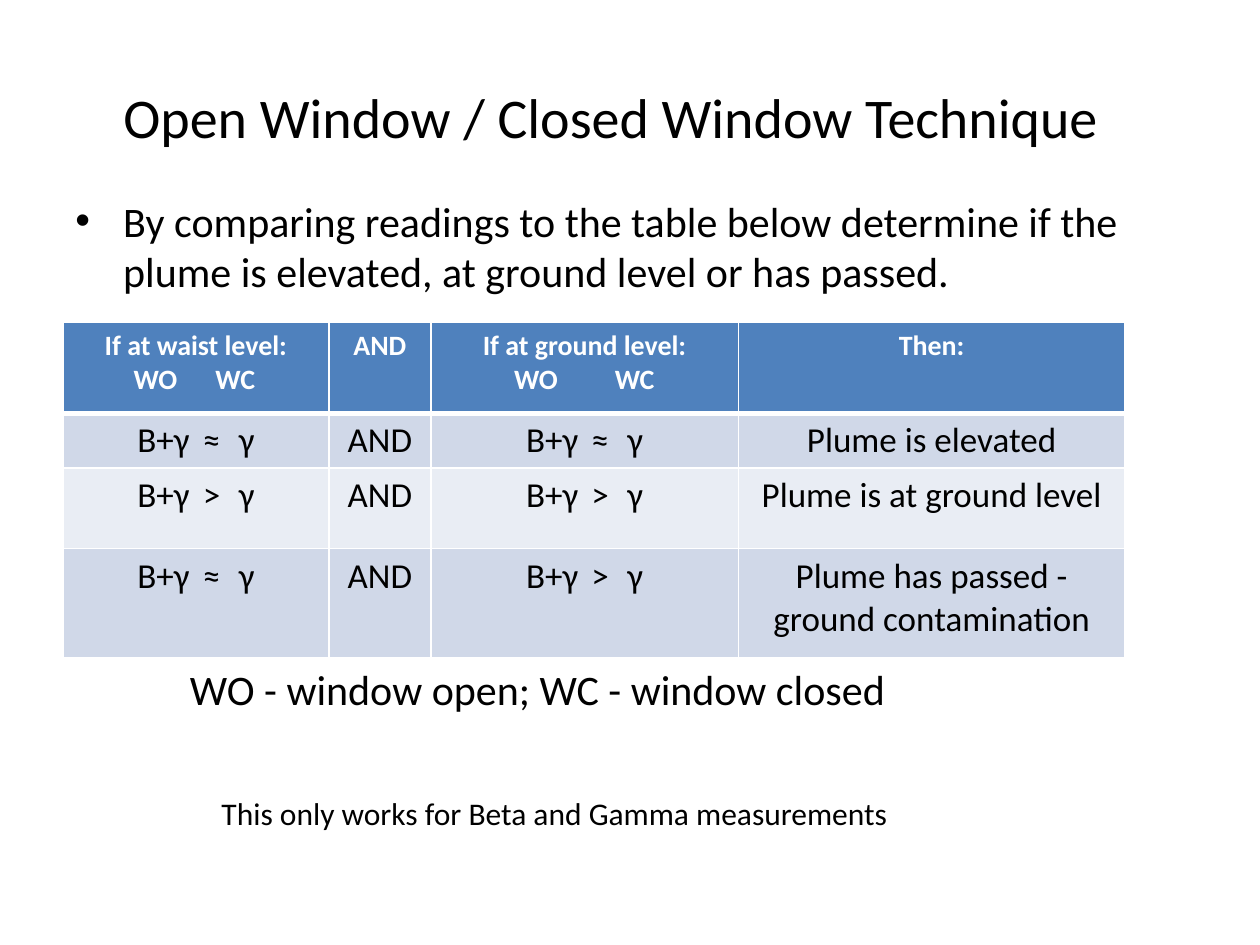
from lxml.etree import SubElement
from pptx import Presentation
from pptx.dml.color import RGBColor
from pptx.enum.text import MSO_ANCHOR, PP_ALIGN
from pptx.oxml.ns import qn
from pptx.util import Inches, Pt

# Content
TITLE = "Open Window / Closed Window Technique"
INSTRUCTION = ("By comparing readings to the table below determine if the plume "
               "is elevated, at ground level or has passed.")
LEGEND = "WO - window open; WC - window closed"
CAVEAT = "This only works for Beta and Gamma measurements"
# Heading, then the places of its WO and WC labels within the cell
HEADINGS = [("If at waist level:", (0.46, 1.11)), ("AND", None),
            ("If at ground level:", (0.56, 1.36)), ("Then:", None)]
# Relation of open to closed reading at waist and at ground, then the finding
FINDINGS = [("≈", "≈", "Plume is elevated"),
            (">", ">", "Plume is at ground level"),
            ("≈", ">", "Plume has passed - ground contamination")]

# Style and grid
FONT = "Calibri"
COLORS = {"text": "000000", "white": "FFFFFF", "header": "4F81BD",
          "odd": "D0D8E8", "even": "E9EDF4"}
COLUMNS = [2.11, 0.81, 2.44, 3.07]
ROWS = [0.72, 0.43, 0.64, 0.87]
LEFT, TABLE_TOP = 0.5, 2.56


def add_run(paragraph, text, size, color="text", bold=False):
    run = paragraph.add_run()
    run.text = text
    run.font.name, run.font.size, run.font.bold = FONT, Pt(size), bold
    run.font.color.rgb = RGBColor.from_string(COLORS[color])
    return run


def add_text(slide, box, text, size):
    frame = slide.shapes.add_textbox(*map(Inches, box)).text_frame
    frame.word_wrap = True
    add_run(frame.paragraphs[0], text, size)
    return frame.paragraphs[0]


def add_bullet(paragraph, indent):
    props = paragraph._p.get_or_add_pPr()
    props.set("marL", str(Inches(indent)))
    props.set("indent", str(-Inches(indent)))
    SubElement(props, qn("a:buFont"), typeface="Arial")
    SubElement(props, qn("a:buChar"), char="•")


def style_cell(cell, fill, bottom_width):
    props = cell._tc.get_or_add_tcPr()
    for side, width in (("L", 1), ("R", 1), ("T", 1), ("B", bottom_width)):
        line = SubElement(props, qn(f"a:ln{side}"), w=str(Pt(width)))
        paint = SubElement(line, qn("a:solidFill"))
        SubElement(paint, qn("a:srgbClr"), val=COLORS["white"])
    cell.fill.solid()
    cell.fill.fore_color.rgb = RGBColor.from_string(COLORS[fill])


def fill_heading(cell, heading, label_stops):
    style_cell(cell, "header", 3)
    first = cell.text_frame.paragraphs[0]
    first.alignment = PP_ALIGN.CENTER
    add_run(first, heading, 16, "white", True)
    if label_stops:
        labels = cell.text_frame.add_paragraph()
        labels.alignment = PP_ALIGN.LEFT
        tabs = SubElement(labels._p.get_or_add_pPr(), qn("a:tabLst"))
        for stop in label_stops:
            SubElement(tabs, qn("a:tab"), pos=str(Inches(stop)), algn="l")
        add_run(labels, "\tWO\tWC", 16, "white", True)


def add_relation(paragraph, sign):
    add_run(paragraph, "Β+γ", 20)
    relation = add_run(paragraph, f" {sign} ", 20)
    relation._r.get_or_add_rPr().set("spc", "300")
    add_run(paragraph, "γ", 20)


def add_findings_table(slide):
    table = slide.shapes.add_table(
        len(ROWS), len(COLUMNS), Inches(LEFT), Inches(TABLE_TOP),
        Inches(sum(COLUMNS)), Inches(sum(ROWS))).table
    for column, width in zip(table.columns, COLUMNS):
        column.width = Inches(width)
    for row, height in zip(table.rows, ROWS):
        row.height = Inches(height)
    for col, (heading, stops) in enumerate(HEADINGS):
        fill_heading(table.cell(0, col), heading, stops)
    for row, (waist, ground, finding) in enumerate(FINDINGS, 1):
        for col, content in enumerate((waist, "AND", ground, finding)):
            cell = table.cell(row, col)
            style_cell(cell, "odd" if row % 2 else "even", 1)
            paragraph = cell.text_frame.paragraphs[0]
            paragraph.alignment = PP_ALIGN.CENTER
            if content in ("≈", ">"):
                add_relation(paragraph, content)
            else:
                add_run(paragraph, content, 20)


def main():
    deck = Presentation()
    deck.slide_width, deck.slide_height = Inches(10), Inches(7.5)
    slide = deck.slides.add_slide(deck.slide_layouts[5])

    # Title
    title = slide.shapes.title
    title.left, title.top, title.width, title.height = map(
        Inches, (0.2, 0.3, 9.3, 1.25))
    title.text_frame.vertical_anchor = MSO_ANCHOR.MIDDLE
    heading = title.text_frame.paragraphs[0]
    heading.alignment = PP_ALIGN.CENTER
    add_run(heading, TITLE, 32)

    # Instruction, table and notes below it
    add_bullet(add_text(slide, (LEFT, 1.5, 9, 0.95), INSTRUCTION, 24), 0.38)
    add_findings_table(slide)
    add_text(slide, (1.41, TABLE_TOP + sum(ROWS), 7, 0.5), LEGEND, 24)
    add_text(slide, (1.66, 6.25, 7.24, 0.4), CAVEAT, 18)

    deck.save("out.pptx")


if __name__ == "__main__":
    main()
